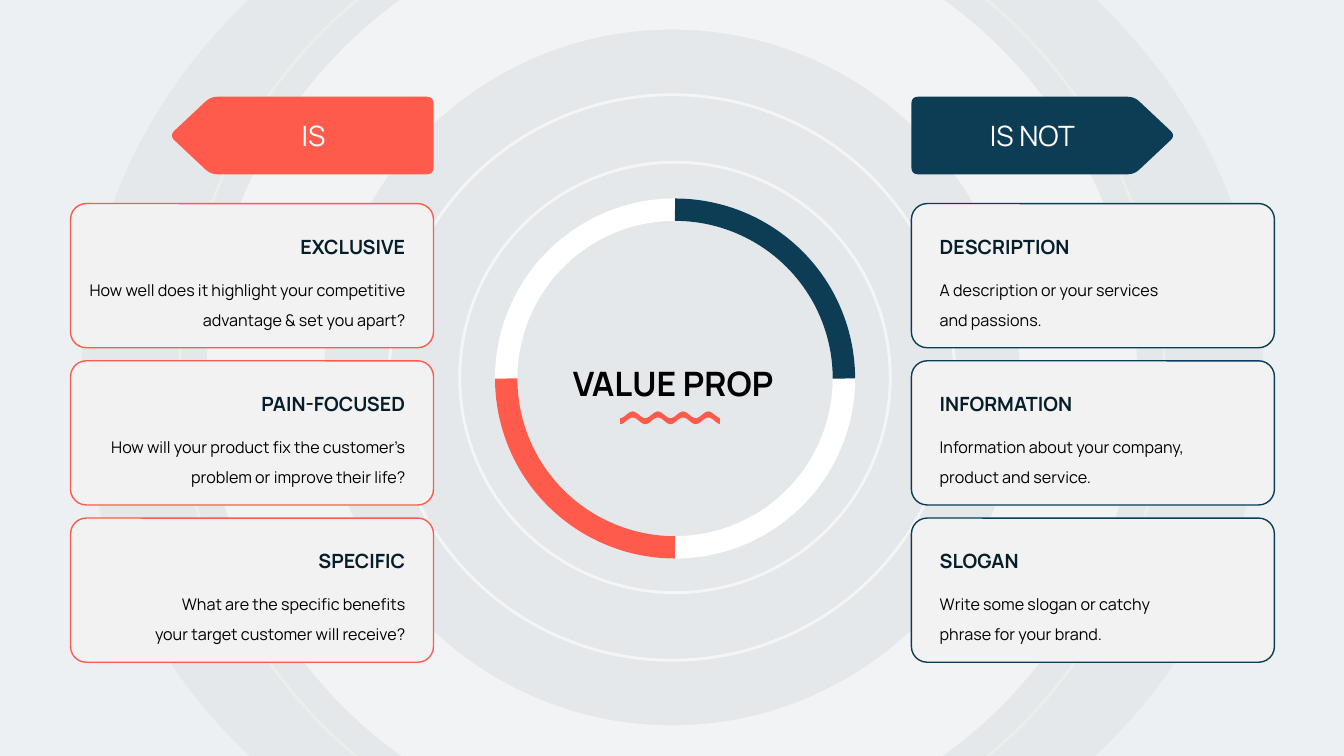
import math

import pptx
import pptx.dml.color
import pptx.enum.shapes
import pptx.enum.text
import pptx.oxml
import pptx.oxml.ns
import pptx.util

PX = 9144  # EMU; 100 px to the inch
WIDE, HIGH = 1333, 750
FONT = "Manrope"
COLORS = {
    "back": "ECF0F2", "disc": "D8D8D8", "white": "FFFFFF", "card": "F2F2F2",
    "coral": "FF5B4C", "navy": "0C3D54", "head": "051E2A", "black": "000000",
}
KIND = pptx.enum.shapes.MSO_SHAPE
ALIGN = pptx.enum.text.PP_ALIGN
PITCH = 156  # from one card to the next

IS_CARDS = [
    ("EXCLUSIVE", "How well does it highlight your competitive advantage & set you apart?", 335),
    ("PAIN-FOCUSED", "How will your product fix the customer’s problem or improve their life?", 324),
    ("SPECIFIC", "What are the specific benefits\vyour target customer will receive?", 289),
]
NOT_CARDS = [
    ("DESCRIPTION", "A description or your services\nand passions.", 306),
    ("INFORMATION", "Information about your company, product and service.", 261),
    ("SLOGAN", "Write some slogan or catchy phrase for your brand.", 235),
]


def emu(*sizes):
    return [pptx.util.Emu(round(size * PX)) for size in sizes]


def rgb(name):
    return pptx.dml.color.RGBColor.from_string(COLORS[name])


def paint(shape, fill=None, line=None, width=1, alpha=100):
    """Set fill and outline; alpha (percent) applies to every colour set."""
    shape.shadow.inherit = False
    if fill:
        shape.fill.solid()
        shape.fill.fore_color.rgb = rgb(fill)
    else:
        shape.fill.background()
    if line:
        shape.line.color.rgb = rgb(line)
        shape.line.width = pptx.util.Pt(width)
    else:
        shape.line.fill.background()
    if alpha < 100:
        for color in shape.element.iter(pptx.oxml.ns.qn("a:srgbClr")):
            node = pptx.oxml.parse_xml(
                f'<a:alpha {pptx.oxml.ns.nsdecls("a")} val="{alpha * 1000}"/>')
            color.append(node)


def draw(slide, kind, box, **look):
    shape = slide.shapes.add_shape(kind, *emu(*box))
    paint(shape, **look)
    return shape


def trace(slide, points, fill):
    """Fill a closed outline given as px points."""
    first, *rest = [tuple(emu(*point)) for point in points]
    pen = slide.shapes.build_freeform(*first)
    pen.add_line_segments(rest, close=True)
    paint(pen.convert_to_shape(), fill=fill)


def style(shape, text, size, color, align, bold=False, space=1.0):
    frame = shape.text_frame
    frame.text = text
    frame.word_wrap = True
    frame.auto_size = pptx.enum.text.MSO_AUTO_SIZE.NONE
    frame.vertical_anchor = pptx.enum.text.MSO_ANCHOR.TOP
    inset, = emu(3)
    frame.margin_left = frame.margin_right = inset
    frame.margin_top = frame.margin_bottom = inset
    for para in frame.paragraphs:
        para.alignment = align
        para.line_spacing = space
        for run in para.runs:
            run.font.name = FONT
            run.font.size = pptx.util.Pt(size)
            run.font.bold = bold
            run.font.color.rgb = rgb(color)


def write(slide, box, *args, **look):
    style(slide.shapes.add_textbox(*emu(*box)), *args, **look)


def soften(corners, cut=7, steps=6):
    """Round each corner of a polygon, starting cut px before it."""
    points = []
    for i, (x, y) in enumerate(corners):
        ends = []
        for nx, ny in (corners[i - 1], corners[(i + 1) % len(corners)]):
            part = cut / math.hypot(nx - x, ny - y)
            ends.append((x + (nx - x) * part, y + (ny - y) * part))
        (ax, ay), (bx, by) = ends
        for step in range(steps + 1):
            t = step / steps
            a, m, b = (1 - t) ** 2, 2 * t * (1 - t), t * t
            points.append((a * ax + m * x + b * bx, a * ay + m * y + b * by))
    return points


def add_rings(slide):
    oval = KIND.OVAL
    draw(slide, oval, (81, -163, 1172, 1075), fill="disc", alpha=30)
    band = draw(slide, KIND.DONUT, (205, -87, 923, 923), fill="white", alpha=50)
    band.adjustments[0] = 0.126
    for box, line in (
        ((386, 94, 561, 561), "white"),
        ((178, -113, 977, 977), "card"),
        ((456, 161, 427, 427), "white"),
    ):
        draw(slide, oval, box, line=line, width=2, alpha=60)
    dial = (502, 208, 335, 335)
    draw(slide, oval, dial, line="white", width=16)
    for line, turn in (("navy", 0), ("coral", 180)):
        draw(slide, KIND.ARC, dial, line=line, width=16).rotation = turn


def add_tag(slide, text, color, mirror):
    top, low = 96, 173
    corners = [(904, top), (1125, top), (1166, (top + low) / 2), (1125, low), (904, low)]
    left = 954
    if mirror:
        corners = [(WIDE + 1 - x, y) for x, y in corners]
        left = 241
    trace(slide, soften(corners), color)
    write(slide, (left, 115, 140, 39), text, 20, "white", ALIGN.CENTER)


def add_cards(slide, cards, color, left, align):
    for i, (head, body, width) in enumerate(cards):
        top = 202 + i * PITCH
        card = draw(slide, KIND.ROUNDED_RECTANGLE, (left, top, 360, 143),
                    fill="card", line=color)
        card.adjustments[0] = 0.109
        for text, wide, drop, high, look in (
            (head, 196, 28, 30, (14, "head", align, True)),
            (body, width, 62, 54, (11.5, "black", align, False, 1.57)),
        ):
            start = left + 335 - wide if align == ALIGN.RIGHT else left + 25
            write(slide, (start, top + drop, wide, high), text, *look)


def add_title(slide):
    title = slide.shapes.title
    title.left, title.top, title.width, title.height = emu(512, 342, 311, 50)
    style(title, "VALUE PROP", 24, "black", ALIGN.CENTER, bold=True, space=1.37)
    slide.shapes.element.append(title.element)  # bring to front


def add_wave(slide):
    mid = [(x, 414.5 - 3.3 * math.cos(math.tau * (x - 627.5) / 25))
           for x in range(615, 715)]
    upper = [(x, y - 3) for x, y in mid]
    lower = [(x, y + 3) for x, y in reversed(mid)]
    trace(slide, upper + lower, "coral")


def main():
    deck = pptx.Presentation()
    deck.slide_width, deck.slide_height = emu(WIDE, HIGH)
    slide = deck.slides.add_slide(deck.slide_layouts[5])
    slide.background.fill.solid()
    slide.background.fill.fore_color.rgb = rgb("back")
    add_rings(slide)
    add_tag(slide, "IS", "coral", mirror=True)
    add_tag(slide, "IS NOT", "navy", mirror=False)
    add_cards(slide, IS_CARDS, "coral", 70, ALIGN.RIGHT)
    add_cards(slide, NOT_CARDS, "navy", 904, ALIGN.LEFT)
    add_title(slide)
    add_wave(slide)
    deck.save("out.pptx")


if __name__ == "__main__":
    main()
